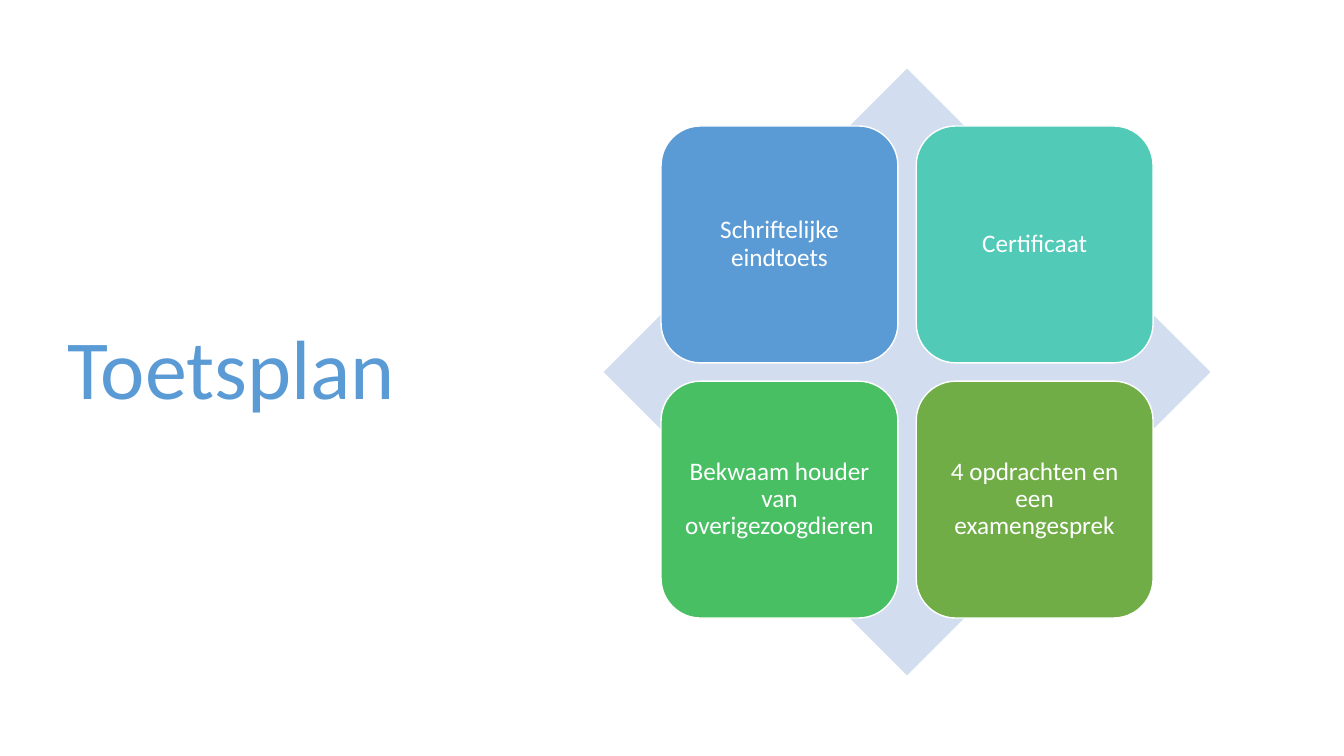
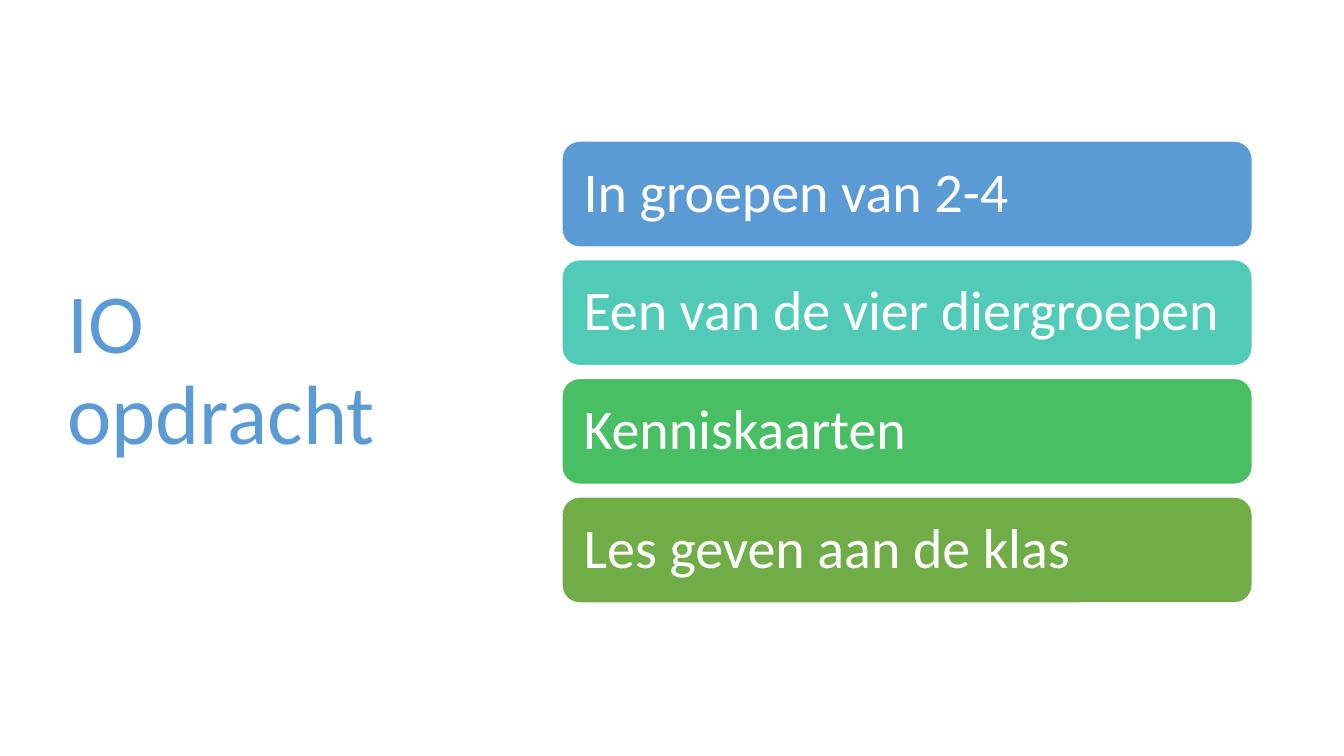
from dataclasses import dataclass

from pptx import Presentation
from pptx.dml.color import RGBColor
from pptx.enum.shapes import MSO_SHAPE
from pptx.enum.text import MSO_ANCHOR, PP_ALIGN
from pptx.slide import Slide
from pptx.text.text import TextFrame
from pptx.util import Cm, Pt

FONT = "Calibri"
WHITE, BLUE, PALE_BLUE = "FFFFFF", "5B9BD5", "D2DEEF"
CARD_COLOURS = (BLUE, "52CAB8", "49BF64", "70AD47")

# Lengths in centimetres
SLIDE_WIDTH, SLIDE_HEIGHT = 33.87, 19.05
CONTENT_TOP, CONTENT_HEIGHT = 1.73, 15.29
TITLE_LEFT, TITLE_WIDTH = 1.45, 10.57
CENTRE_X, CENTRE_Y = 22.86, CONTENT_TOP + CONTENT_HEIGHT / 2


@dataclass(frozen=True)
class CardGrid:
    """A grid of equal cards, centred in the content area."""
    columns: int
    card_width: float
    card_height: float
    gap: float
    margin: float
    text_size: int
    alignment: PP_ALIGN


TILES = CardGrid(2, 5.97, 5.97, 0.46, 0.19, 18, PP_ALIGN.CENTER)
ROWS = CardGrid(1, 17.4, 2.67, 0.32, 0.42, 40, PP_ALIGN.LEFT)


def colour(value: str) -> RGBColor:
    return RGBColor.from_string(value)


def write_text(frame: TextFrame, text: str, size: int, text_colour: str,
               alignment: PP_ALIGN = PP_ALIGN.LEFT) -> None:
    frame.word_wrap = True
    frame.vertical_anchor = MSO_ANCHOR.MIDDLE
    frame.text = text
    para = frame.paragraphs[0]
    para.alignment = alignment
    para.line_spacing = 0.9
    para.font.name = FONT
    para.font.size = Pt(size)
    para.font.color.rgb = colour(text_colour)


def add_titled_slide(deck: Presentation, title: str) -> Slide:
    slide = deck.slides.add_slide(deck.slide_layouts[6])
    box = slide.shapes.add_textbox(Cm(TITLE_LEFT), Cm(CONTENT_TOP),
                                   Cm(TITLE_WIDTH), Cm(CONTENT_HEIGHT))
    write_text(box.text_frame, title, 60, BLUE)
    return slide


def add_diamond(slide: Slide) -> None:
    diamond = slide.shapes.add_shape(
        MSO_SHAPE.DIAMOND, Cm(CENTRE_X - CONTENT_HEIGHT / 2), Cm(CONTENT_TOP),
        Cm(CONTENT_HEIGHT), Cm(CONTENT_HEIGHT))
    diamond.shadow.inherit = False
    diamond.fill.solid()
    diamond.fill.fore_color.rgb = colour(PALE_BLUE)
    diamond.line.fill.background()


def add_cards(slide: Slide, grid: CardGrid, labels: list[str]) -> None:
    row_count = len(labels) // grid.columns
    step_x = grid.card_width + grid.gap
    step_y = grid.card_height + grid.gap
    left = CENTRE_X - (grid.columns * step_x - grid.gap) / 2
    top = CENTRE_Y - (row_count * step_y - grid.gap) / 2
    for index, (label, fill) in enumerate(zip(labels, CARD_COLOURS)):
        row, column = divmod(index, grid.columns)
        card = slide.shapes.add_shape(
            MSO_SHAPE.ROUNDED_RECTANGLE,
            Cm(left + column * step_x), Cm(top + row * step_y),
            Cm(grid.card_width), Cm(grid.card_height))
        card.shadow.inherit = False
        card.fill.solid()
        card.fill.fore_color.rgb = colour(fill)
        card.line.color.rgb = colour(WHITE)
        card.line.width = Pt(1)
        frame = card.text_frame
        frame.margin_left = frame.margin_right = Cm(grid.margin)
        frame.margin_top = frame.margin_bottom = Cm(grid.margin)
        write_text(frame, label, grid.text_size, WHITE, grid.alignment)


def main() -> None:
    deck = Presentation()
    deck.slide_width, deck.slide_height = Cm(SLIDE_WIDTH), Cm(SLIDE_HEIGHT)

    test_plan = add_titled_slide(deck, "Toetsplan")
    add_diamond(test_plan)
    add_cards(test_plan, TILES, [
        "Schriftelijke eindtoets",
        "Certificaat",
        "Bekwaam houder van overigezoogdieren",
        "4 opdrachten en een examengesprek",
    ])

    assignment = add_titled_slide(deck, "IO opdracht")
    add_cards(assignment, ROWS, [
        "In groepen van 2-4",
        "Een van de vier diergroepen",
        "Kenniskaarten",
        "Les geven aan de klas",
    ])

    deck.save("out.pptx")


if __name__ == "__main__":
    main()
